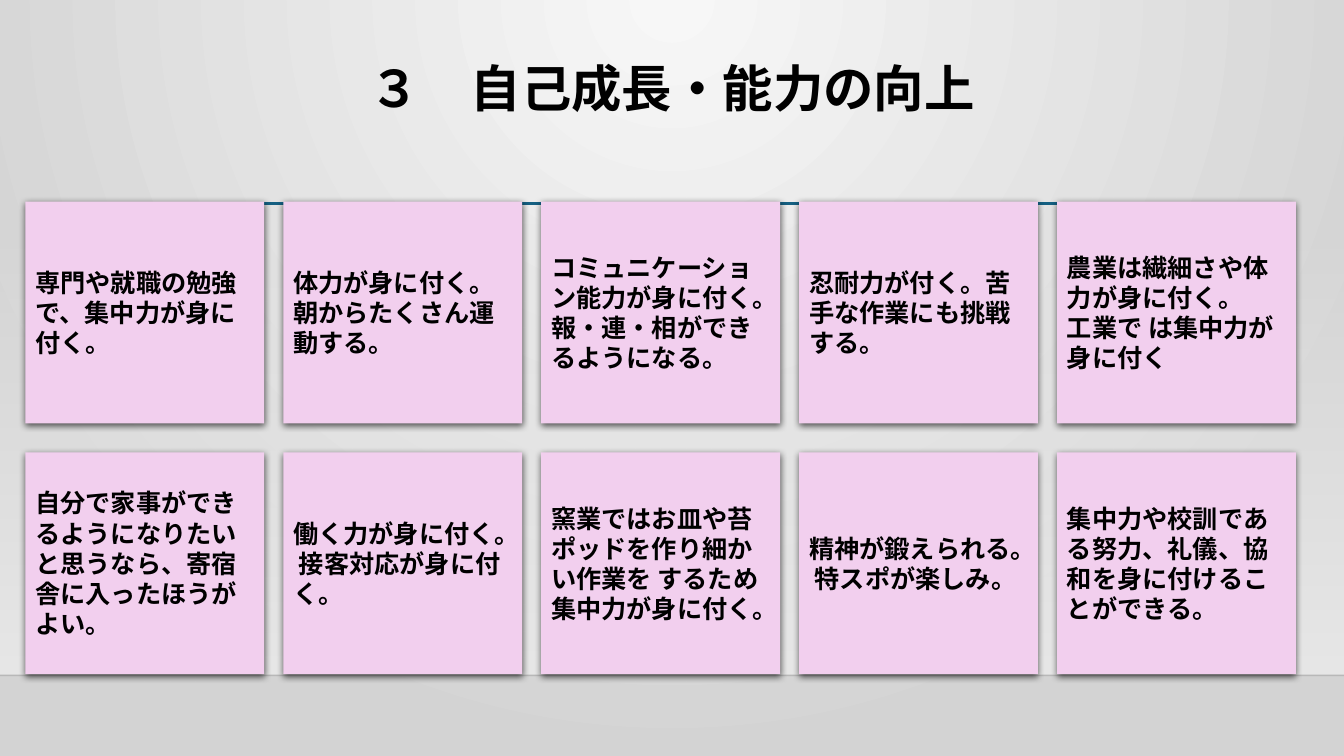
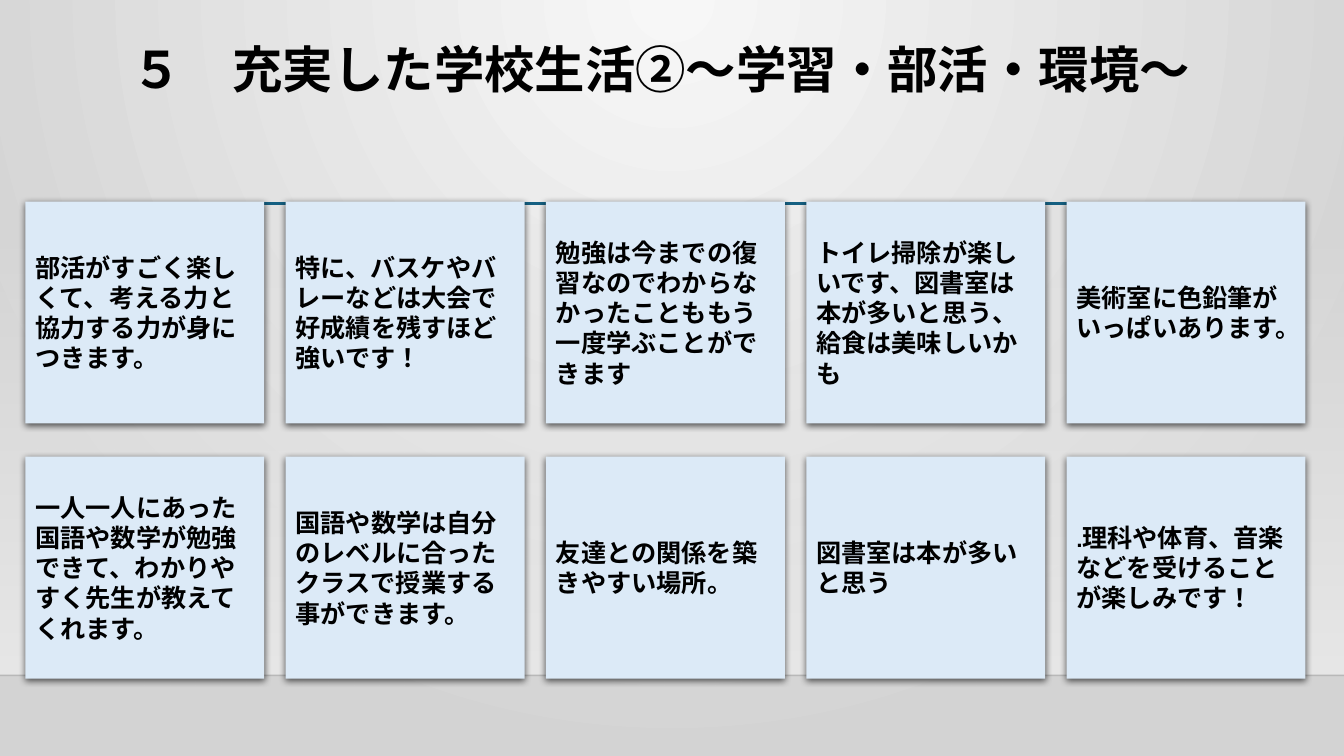
import dataclasses

import pptx
import pptx.dml.color
import pptx.enum.lang
import pptx.enum.shapes
import pptx.enum.text
import pptx.oxml
import pptx.oxml.ns
import pptx.shapes.autoshape
import pptx.shapes.connector
import pptx.slide
import pptx.text.text
import pptx.util
from pptx.dml.color import RGBColor
from pptx.util import Cm

BLACK = RGBColor(0x00, 0x00, 0x00)
FLOOR_LINE = RGBColor(0x00, 0x00, 0x01)
TEAL = RGBColor(0x15, 0x60, 0x82)
PINK = RGBColor(0xF2, 0xCF, 0xEE)
PALE_BLUE = RGBColor(0xDC, 0xEA, 0xF7)
BACKGROUND_CENTRE = RGBColor(0xF7, 0xF7, 0xF7)
BACKGROUND_EDGE = RGBColor(0xD3, 0xD3, 0xD3)
BAND = RGBColor(0xE8, 0xE8, 0xE8)

FONT = "Cabin"
SLIDE_WIDTH, SLIDE_HEIGHT = Cm(33.87), Cm(19.05)
FLOOR = Cm(17.02)
BAND_TOP = Cm(5.61)
TITLE_HEIGHT = Cm(3.68)
CARD_LEFT, CARD_TOP = Cm(0.64), Cm(5.08)
CARD_WIDTH, CARD_HEIGHT = Cm(6.02), Cm(5.59)

CIRCLE = '<a:path path="circle"><a:fillToRect l="43000" t="0" r="43000" b="100000"/></a:path>'
DOWNWARD = '<a:lin ang="5400000" scaled="0"/>'


@dataclasses.dataclass(frozen=True)
class CardSlide:
    title: str
    title_left: pptx.util.Length
    title_top: pptx.util.Length
    title_width: pptx.util.Length
    card_colour: RGBColor
    column_step: pptx.util.Length
    row_step: pptx.util.Length
    rows: tuple[tuple[str, ...], ...]


CARD_SLIDES = (
    CardSlide(
        "３\u3000自己成長・能力の向上".replace("\u3000", "　"),
        Cm(2.34), Cm(0.46), Cm(29.21), PINK, Cm(6.5), Cm(6.32),
        (
            (
                "専門や就職の勉強で、集中力が身に付く。",
                "体力が身に付く。朝からたくさん運動する。",
                "コミュニケーション能力が身に付く。報・連・相ができるようになる。",
                "忍耐力が付く。苦手な作業にも挑戦する。",
                "農業は繊細さや体力が身に付く。\n工業で は集中力が身に付く",
            ),
            (
                "自分で家事ができるようになりたいと思うなら、寄宿舎に入ったほうがよい。",
                "働く力が身に付く。 接客対応が身に付く。",
                "窯業ではお皿や苔ポッドを作り細かい作業を するため集中力が身に付く。",
                "精神が鍛えられる。 特スポが楽しみ。",
                "集中力や校訓である努力、礼儀、協和を身に付けることができる。",
            ),
        ),
    ),
    CardSlide(
        "５　充実した学校生活②～学習・部活・環境～",
        Cm(0.64), Cm(-0.03), Cm(32.03), PALE_BLUE, Cm(6.56), Cm(6.43),
        (
            (
                "部活がすごく楽しくて、考える力と協力する力が身につきます。",
                "特に、バスケやバレーなどは大会で好成績を残すほど強いです！",
                "勉強は今までの復習なのでわからなかったことももう一度学ぶことができます",
                "トイレ掃除が楽しいです、図書室は本が多いと思う、給食は美味しいかも",
                "美術室に色鉛筆がいっぱいあります。",
            ),
            (
                "一人一人にあった国語や数学が勉強できて、わかりやすく先生が教えてくれます。",
                "国語や数学は自分のレベルに合ったクラスで授業する事ができます。",
                "友達との関係を築きやすい場所。",
                "図書室は本が多いと思う",
                ".理科や体育、音楽などを受けることが楽しみです！",
            ),
        ),
    ),
)


def make_element(tag: str, content: str = "", attributes: str = ""):
    """Build one DrawingML element."""
    namespace = pptx.oxml.ns.nsdecls("a")
    return pptx.oxml.parse_xml(f"<a:{tag} {namespace} {attributes}>{content}</a:{tag}>")


def replace_solid_fill(properties, start: RGBColor, end: RGBColor,
                       direction: str, start_alpha: int = 100) -> None:
    """Put a two-stop gradient in the place of a solid fill."""
    stops = "".join(
        f'<a:gs pos="{position}000"><a:srgbClr val="{colour}">'
        f'<a:alpha val="{alpha}000"/></a:srgbClr></a:gs>'
        for position, colour, alpha in ((0, start, start_alpha), (100, end, 100))
    )
    gradient = make_element("gradFill", f"<a:gsLst>{stops}</a:gsLst>{direction}",
                            'rotWithShape="1"')
    properties.replace(properties.find(pptx.oxml.ns.qn("a:solidFill")), gradient)


def paint_background(master: pptx.slide.SlideMaster) -> None:
    master.background.fill.solid()
    properties = next(master.element.iter(pptx.oxml.ns.qn("p:bgPr")))
    replace_solid_fill(properties, BACKGROUND_CENTRE, BACKGROUND_EDGE, CIRCLE)


def add_rectangle(slide: pptx.slide.Slide, left: int, top: int, width: int,
                  height: int, colour: RGBColor) -> pptx.shapes.autoshape.Shape:
    shape = slide.shapes.add_shape(
        pptx.enum.shapes.MSO_SHAPE.RECTANGLE, left, top, width, height)
    shape.fill.solid()
    shape.fill.fore_color.rgb = colour
    shape.line.fill.background()
    shape.shadow.inherit = False
    return shape


def add_horizontal_line(slide: pptx.slide.Slide, left: int, right: int, top: int,
                        colour: RGBColor, points: float) -> pptx.shapes.connector.Connector:
    line = slide.shapes.add_connector(
        pptx.enum.shapes.MSO_CONNECTOR.STRAIGHT, left, top, right, top)
    line.line.color.rgb = colour
    line.line.width = pptx.util.Pt(points)
    line.element.spPr.append(make_element("effectLst"))
    return line


def add_scenery(slide: pptx.slide.Slide) -> None:
    """Draw the fading band, the faint floor line and the accent line."""
    band = add_rectangle(slide, 0, BAND_TOP, SLIDE_WIDTH, FLOOR - BAND_TOP, BAND)
    replace_solid_fill(band.element.spPr, BAND, BAND, DOWNWARD, start_alpha=0)
    floor = add_horizontal_line(slide, 0, SLIDE_WIDTH, FLOOR, FLOOR_LINE, 1)
    colour = next(floor.element.iter(pptx.oxml.ns.qn("a:srgbClr")))
    colour.append(make_element("alpha", attributes='val="20000"'))
    add_horizontal_line(slide, Cm(4.04), Cm(30.73), Cm(5.13), TEAL, 2.5)


def write_text(frame: pptx.text.text.TextFrame, text: str, points: int,
               alignment: pptx.enum.text.PP_ALIGN, line_spacing: float) -> None:
    frame.word_wrap = True
    frame.vertical_anchor = pptx.enum.text.MSO_ANCHOR.MIDDLE
    frame.text = text
    for paragraph in frame.paragraphs:
        paragraph.alignment = alignment
        paragraph.line_spacing = line_spacing
        font = paragraph.font
        font.name = FONT
        font.size = pptx.util.Pt(points)
        font.bold = True
        font.color.rgb = BLACK
        font.language_id = pptx.enum.lang.MSO_LANGUAGE_ID.JAPANESE
        latin = next(paragraph._p.iter(pptx.oxml.ns.qn("a:latin")))
        latin.addnext(make_element("ea", attributes=f'typeface="{FONT}"'))


def add_card(slide: pptx.slide.Slide, left: int, top: int,
             colour: RGBColor, text: str) -> None:
    card = add_rectangle(slide, left, top, CARD_WIDTH, CARD_HEIGHT, colour)
    effects = card.element.spPr.find(pptx.oxml.ns.qn("a:effectLst"))
    effects.append(make_element(
        "outerShdw",
        '<a:srgbClr val="000000"><a:alpha val="63000"/></a:srgbClr>',
        f'blurRad="{pptx.util.Pt(5)}" dist="{pptx.util.Pt(1.5)}" dir="5400000" '
        'algn="ctr" rotWithShape="0"'))
    write_text(card.text_frame, text, 18, pptx.enum.text.PP_ALIGN.LEFT, 1.0)


def add_card_slide(presentation, content: CardSlide) -> None:
    slide = presentation.slides.add_slide(presentation.slide_layouts[6])
    add_scenery(slide)
    title = slide.shapes.add_textbox(
        content.title_left, content.title_top, content.title_width, TITLE_HEIGHT)
    write_text(title.text_frame, content.title, 36, pptx.enum.text.PP_ALIGN.CENTER, 0.9)
    for row, texts in enumerate(content.rows):
        for column, text in enumerate(texts):
            add_card(slide, CARD_LEFT + column * content.column_step,
                     CARD_TOP + row * content.row_step, content.card_colour, text)


def main() -> None:
    presentation = pptx.Presentation()
    presentation.slide_width = SLIDE_WIDTH
    presentation.slide_height = SLIDE_HEIGHT
    paint_background(presentation.slide_master)
    for content in CARD_SLIDES:
        add_card_slide(presentation, content)
    presentation.save("out.pptx")


if __name__ == "__main__":
    main()
